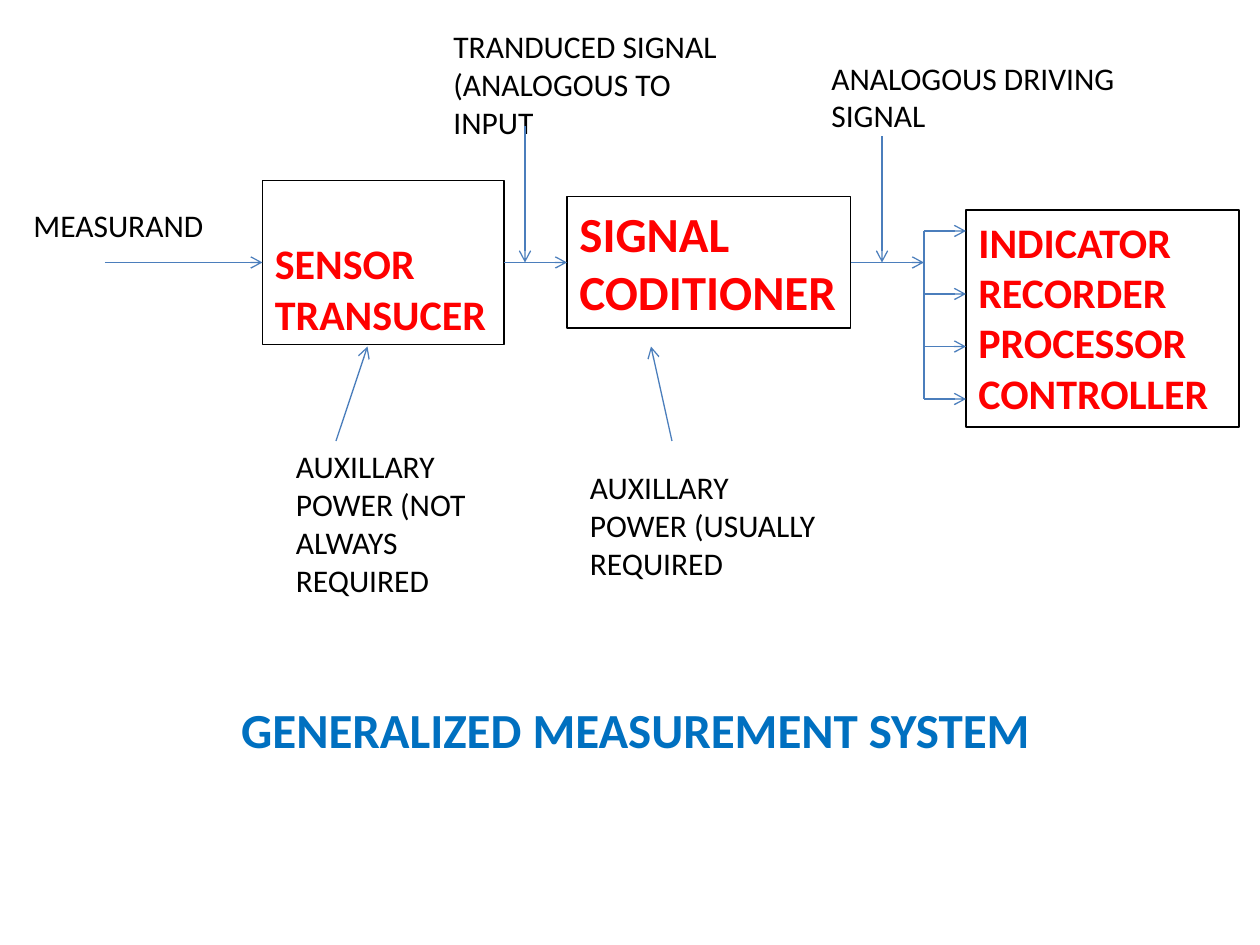
"""Build a block diagram slide of a generalized measurement system."""
from pptx import Presentation
from pptx.dml.color import RGBColor
from pptx.enum.shapes import MSO_CONNECTOR, MSO_SHAPE
from pptx.enum.text import MSO_ANCHOR, PP_ALIGN
from pptx.util import Pt
from lxml.etree import SubElement
from pptx.oxml.ns import qn

BLACK = RGBColor(0x00, 0x00, 0x00)
RED = RGBColor(0xFF, 0x00, 0x00)
BLUE = RGBColor(0x00, 0x70, 0xC0)
LINE = RGBColor(0x4B, 0x7E, 0xBC)


def write(sp, lines, size, color, bold=False, align=PP_ALIGN.LEFT, anchor=MSO_ANCHOR.TOP):
    tf = sp.text_frame
    tf.word_wrap = True
    tf.vertical_anchor = anchor
    tf.text = "\n".join(lines)
    for p in tf.paragraphs:
        p.alignment = align
        p.font.name = "Calibri"
        p.font.size = Pt(size)
        p.font.bold = bold
        p.font.color.rgb = color


def connect(x1, y1, x2, y2, begin=None, end=None, arrow=True):
    c = s.shapes.add_connector(MSO_CONNECTOR.STRAIGHT, Pt(x1), Pt(y1), Pt(x2), Pt(y2))
    if begin is not None:
        c.begin_connect(begin, 3)
    if end is not None:
        c.end_connect(end, 1)
    c.line.color.rgb = LINE
    c.line.width = Pt(0.75)
    if arrow:
        SubElement(c.line._get_or_add_ln(), qn("a:tailEnd"), type="arrow")
    SubElement(c._element.spPr, qn("a:effectLst"))


prs = Presentation()
prs.slide_width, prs.slide_height = Pt(720), Pt(540)
s = prs.slides.add_slide(prs.slide_layouts[6])

blocks = []
for x, y, w, h, size, anchor, lines in [
    (150, 103, 138, 94, 24, MSO_ANCHOR.BOTTOM, ["SENSOR TRANSUCER"]),
    (324, 112.5, 162, 75, 28, MSO_ANCHOR.TOP, ["SIGNAL CODITIONER"]),
    (552, 120, 156, 124, 24, MSO_ANCHOR.TOP,
     ["INDICATOR", "RECORDER", "PROCESSOR", "CONTROLLER"]),
]:
    sp = s.shapes.add_shape(MSO_SHAPE.RECTANGLE, Pt(x), Pt(y), Pt(w), Pt(h))
    sp.shadow.inherit = False
    sp.fill.background()
    sp.line.color.rgb = BLACK
    sp.line.width = Pt(0.75)
    write(sp, lines, size, RED, bold=True, anchor=anchor)
    blocks.append(sp)
sensor, conditioner, output = blocks

for x, y, w, h, text in [
    (12, 114, 120, 29, "MEASURAND"),
    (162, 252, 120, 94, "AUXILLARY POWER (NOT ALWAYS REQUIRED"),
    (330, 264, 150, 94, "AUXILLARY POWER (USUALLY REQUIRED"),
    (252, 12, 168, 73, "TRANDUCED SIGNAL (ANALOGOUS TO INPUT"),
    (468, 30, 186, 51, "ANALOGOUS DRIVING SIGNAL"),
]:
    write(s.shapes.add_textbox(Pt(x), Pt(y), Pt(w), Pt(h)), [text], 18, BLACK)

title = s.shapes.add_textbox(Pt(114), Pt(396), Pt(498), Pt(41))
write(title, ["GENERALIZED MEASUREMENT SYSTEM"], 28, BLUE, bold=True, align=PP_ALIGN.CENTER)

connect(60, 150, 150, 150, end=sensor)
connect(288, 150, 324, 150, begin=sensor, end=conditioner)
connect(486, 150, 528, 150, begin=conditioner)
for x1, y1, x2, y2 in [(192, 252, 210, 198), (384, 252, 372, 198),
                       (300, 72, 300, 150), (504, 78, 504, 150)]:
    connect(x1, y1, x2, y2)

connect(528, 132, 528, 228, arrow=False)
for y in (132, 168, 198, 228):
    connect(528, y, 552, y)

prs.save("out.pptx")
